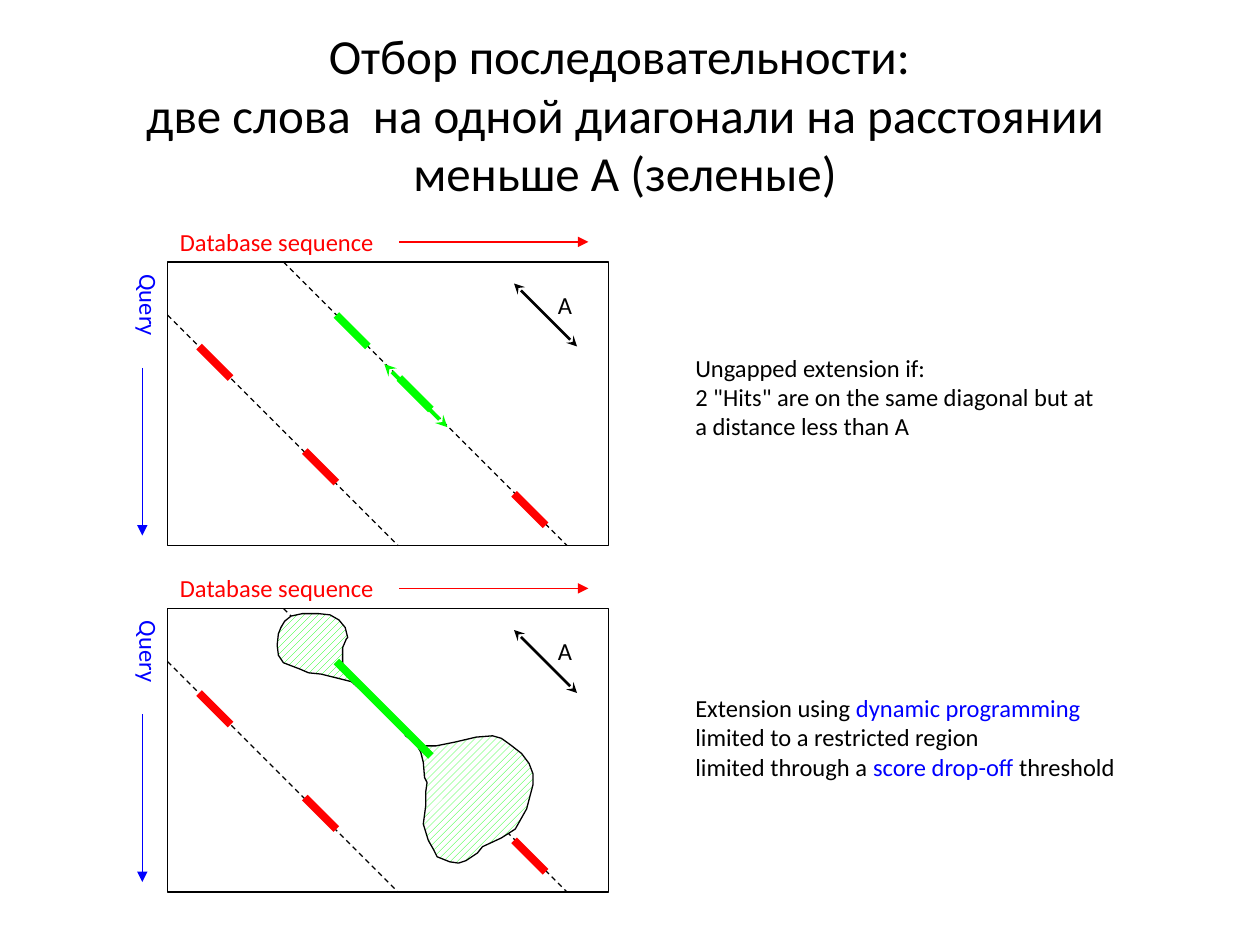
from pptx import Presentation
from pptx import util as u
from pptx.dml.color import RGBColor
from pptx.enum import dml, shapes, text
from pptx.oxml.ns import qn
from lxml import etree

COLORS = {"black": "000000", "white": "FFFFFF", "red": "FF0000",
          "green": "00FF00", "blue": "0000FF"}
FONT = "Calibri"
PANEL_LEFT, PANEL_WIDTH, PANEL_HEIGHT = 1.33, 3.5, 2.25
PANEL_TOPS = (2.08, 4.83)
HIT = 0.25
RED_HITS = ((1.58, 0.67), (2.42, 1.5), (4.08, 1.84))
GREEN_HITS = ((2.67, 0.42), (3.17, 0.92))

SEARCH_REGION = (
    (2.88, 5.46), (2.79, 5.38), (2.76, 5.33), (2.72, 5.28), (2.72, 5.14),
    (2.75, 5.07), (2.76, 5.06), (2.74, 4.98), (2.69, 4.92), (2.62, 4.88),
    (2.53, 4.87), (2.4, 4.87), (2.31, 4.89), (2.26, 4.93), (2.23, 4.98),
    (2.21, 5.03), (2.2, 5.12), (2.21, 5.2), (2.25, 5.26), (2.38, 5.31),
    (2.45, 5.34), (2.55, 5.35), (2.67, 5.38), (2.79, 5.41), (2.88, 5.49),
    (2.93, 5.52), (3, 5.58), (3.04, 5.64), (3.1, 5.7), (3.17, 5.76),
    (3.22, 5.81), (3.26, 5.86), (3.3, 5.9), (3.34, 5.97), (3.36, 6.05),
    (3.37, 6.17), (3.39, 6.21), (3.38, 6.28), (3.38, 6.39), (3.36, 6.54),
    (3.4, 6.67), (3.44, 6.74), (3.47, 6.8), (3.57, 6.84), (3.64, 6.85),
    (3.7, 6.83), (3.79, 6.77), (3.83, 6.72), (3.98, 6.65), (4.09, 6.58),
    (4.18, 6.42), (4.23, 6.23), (4.23, 6.14), (4.2, 6.06), (4.14, 5.98),
    (4.05, 5.91), (3.98, 5.86), (3.91, 5.84), (3.78, 5.85), (3.61, 5.89),
    (3.46, 5.92), (3.35, 5.92), (3.3, 5.9), (3.22, 5.84), (3.18, 5.77),
    (3.14, 5.72), (3.07, 5.66), (3.03, 5.61), (2.95, 5.53), (2.9, 5.49),
)


def rgb(name):
    return RGBColor.from_string(COLORS[name])


def add_text(slide, box, paragraphs, size=14, wrap=False, vertical=False):
    shape = slide.shapes.add_textbox(*map(u.Inches, box))
    frame = shape.text_frame
    frame.word_wrap = wrap
    frame.auto_size = text.MSO_AUTO_SIZE.SHAPE_TO_FIT_TEXT
    if vertical:
        frame._txBody.bodyPr.set("vert", "eaVert")
    for index, pieces in enumerate(paragraphs):
        paragraph = frame.add_paragraph() if index else frame.paragraphs[0]
        for words, color in pieces:
            run = paragraph.add_run()
            run.text = words
            run.font.name = FONT
            run.font.size = u.Pt(size)
            run.font.color.rgb = rgb(color)
    return shape


def add_title(slide):
    shape = slide.shapes.add_textbox(*map(u.Inches, (0.46, 0.14, 9, 1.52)))
    frame = shape.text_frame
    frame.word_wrap = True
    frame.vertical_anchor = text.MSO_ANCHOR.MIDDLE
    paragraph = frame.paragraphs[0]
    paragraph.text = ("Отбор последовательности: \v"
                      "две слова  на одной диагонали на расстоянии меньше A (зеленые)")
    paragraph.alignment = text.PP_ALIGN.CENTER
    for run in paragraph.runs:
        run.font.name = FONT
        run.font.size = u.Pt(28)
        run.font.color.rgb = rgb("black")


def add_line(slide, start, end, color, width=0.75, dashed=False, head=None, tail=None):
    line = slide.shapes.add_connector(
        shapes.MSO_CONNECTOR.STRAIGHT, *map(u.Inches, (*start, *end)))
    line.line.color.rgb = rgb(color)
    line.line.width = u.Pt(width)
    if dashed:
        line.line.dash_style = dml.MSO_LINE.DASH
    properties = line._element.spPr
    outline = properties.find(qn("a:ln"))
    for tag, arrow in (("a:headEnd", head), ("a:tailEnd", tail)):
        if arrow:
            etree.SubElement(outline, qn(tag), type=arrow)
    etree.SubElement(properties, qn("a:effectLst"))


def add_diagonal(slide, x, y, length, color, width, **style):
    add_line(slide, (x, y), (x + length, y + length), color, width, **style)


def add_panel(slide, top):
    add_text(slide, (PANEL_LEFT, top - 0.33, 1.93, 0.33), [[("Database sequence", "red")]])
    frame = slide.shapes.add_shape(
        shapes.MSO_SHAPE.RECTANGLE,
        *map(u.Inches, (PANEL_LEFT, top, PANEL_WIDTH, PANEL_HEIGHT)))
    frame.shadow.inherit = False
    frame.fill.solid()
    frame.fill.fore_color.rgb = rgb("white")
    frame.line.color.rgb = rgb("black")
    frame.line.width = u.Pt(0.75)
    add_text(slide, (0.92, top, 0.43, 0.63), [[("Query", "blue")]], vertical=True)
    add_diagonal(slide, PANEL_LEFT, top + 0.42, 1.83, "black", 0.75, dashed=True)
    add_diagonal(slide, 2.25, top, PANEL_HEIGHT, "black", 0.75, dashed=True)
    for x, offset in RED_HITS:
        add_diagonal(slide, x, top + offset, HIT, "red", 4.5)
    add_text(slide, (4.33, top + 0.17, 0.33, 0.33), [[("A", "black")]])
    add_diagonal(slide, 4.08, top + 0.17, 0.5, "black", 1.5, head="stealth", tail="stealth")
    add_line(slide, (3.17, top - 0.16), (4.67, top - 0.16), "red", tail="triangle")
    add_line(slide, (1.13, top + 0.84), (1.13, top + 2.17), "blue", tail="triangle")


def add_search_region(slide):
    points = [(u.Inches(x), u.Inches(y)) for x, y in SEARCH_REGION]
    builder = slide.shapes.build_freeform(*points[0])
    builder.add_line_segments(points[1:], close=True)
    region = builder.convert_to_shape()
    region.shadow.inherit = False
    region.fill.patterned()
    region.fill.pattern = dml.MSO_PATTERN.WIDE_UPWARD_DIAGONAL
    region.fill.fore_color.rgb = rgb("green")
    region.fill.back_color.rgb = rgb("white")
    region.line.color.rgb = rgb("black")
    region.line.width = u.Pt(0.75)


def main():
    presentation = Presentation()
    presentation.slide_width = u.Inches(10)
    presentation.slide_height = u.Inches(7.5)
    slide = presentation.slides.add_slide(presentation.slide_layouts[6])
    add_title(slide)
    for top in PANEL_TOPS:
        add_panel(slide, top)

    upper, lower = PANEL_TOPS
    for x, offset in GREEN_HITS:
        add_diagonal(slide, x, upper + offset, HIT, "green", 4.5)
    add_diagonal(slide, 3.05, 2.89, 0.5, "green", 2.25, head="stealth", tail="stealth")
    add_text(slide, (5.42, 2.75, 3.43, 0.8), [
        [("Ungapped extension if:", "black")],
        [("2 \"Hits\" are on the same diagonal but at a distance less than A", "black")],
    ], wrap=True)

    add_search_region(slide)
    add_diagonal(slide, 2.67, lower + 0.42, 0.75, "green", 4.5)
    add_text(slide, (5.42, 5.45, 3.67, 1.03), [
        [("Extension using ", "black"), ("dynamic programming", "blue")],
        [("limited to a restricted region", "black")],
        [("limited through a ", "black"), ("score drop-off", "blue"), (" threshold", "black")],
    ], wrap=True)
    presentation.save("out.pptx")


if __name__ == "__main__":
    main()
